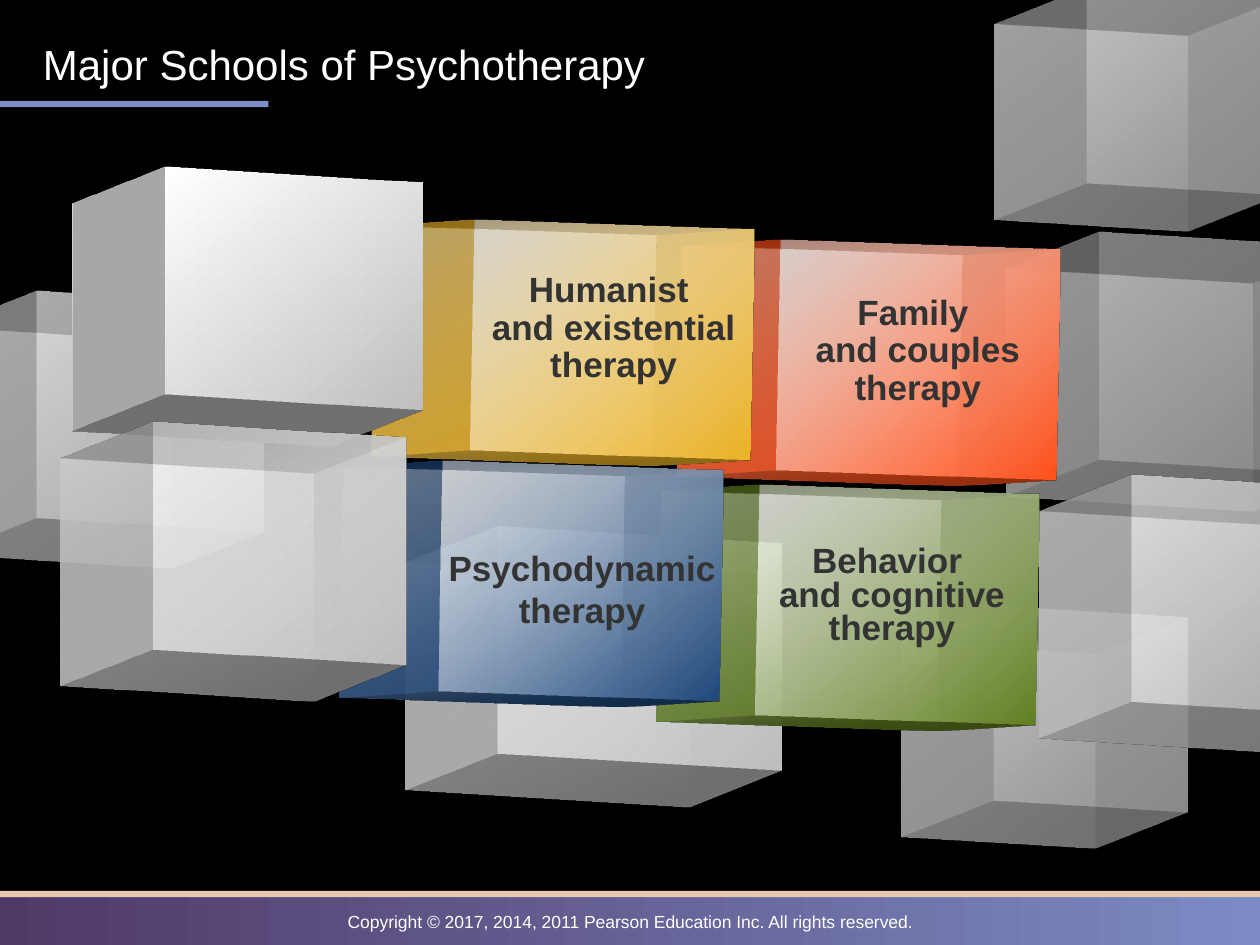
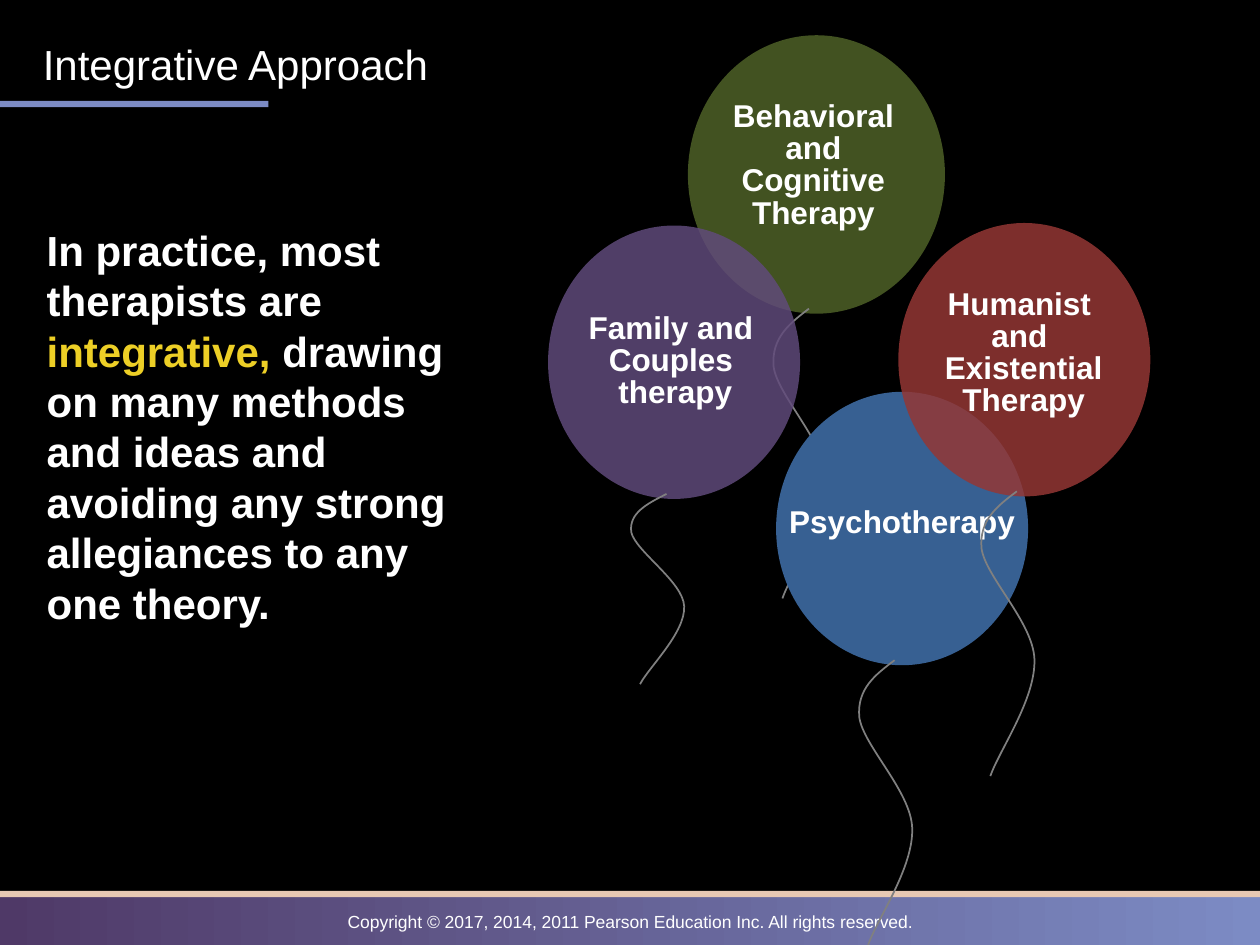
from lxml import etree
from pptx import Presentation
from pptx.dml.color import RGBColor
from pptx.enum.shapes import MSO_SHAPE
from pptx.enum.text import MSO_ANCHOR, MSO_AUTO_SIZE, PP_ALIGN
from pptx.oxml.ns import qn
from pptx.util import Inches, Pt

RECT, OVAL = MSO_SHAPE.RECTANGLE, MSO_SHAPE.OVAL
LEFT, CENTER = PP_ALIGN.LEFT, PP_ALIGN.CENTER
TOP, MIDDLE = MSO_ANCHOR.TOP, MSO_ANCHOR.MIDDLE
NO_FIT = MSO_AUTO_SIZE.NONE
COLS, ROWS = 10, 7.5
FONT = "Arial"
COLORS = {
    "black": "000000", "white": "FFFFFF", "ink": "333333", "accent": "EDCF26",
    "plum": "4F3967", "periwinkle": "7C8BC4", "sand": "E7C8B3",
    "silver": "BFBFBF", "string": "808080",
    "amber": "EDB426", "orange": "FF511B", "green": "618021", "blue": "1F497D",
    "olive": "4F6228", "azure": "376092", "violet": "604A7B", "brick": "953735",
}
GRAY_VIEW = {"lat": 351, "lon": 338.5, "tilt": 0}
COLOR_VIEW = {"lat": 358, "lon": 337, "tilt": 1.1}
CUBE_DEPTH = Inches(2)
STRING = [(0, 0), (-0.15, 0.05), (-0.3, 0.1), (-0.28, 0.2), (-0.25, 0.3),
          (0.13, 0.46), (0.14, 0.59), (0.15, 0.73), (-0.14, 0.91), (-0.21, 1)]


def rgb(name):
    return RGBColor.from_string(COLORS[name])


def add(parent, tag, **attributes):
    child = etree.SubElement(parent, qn(tag))
    for key, value in attributes.items():
        child.set(key, str(value))
    return child


def write(tf, text, size=18, color="white", bold=False, align=LEFT,
          spacing=1.0, anchor=TOP, accent=None):
    tf.word_wrap = True
    tf.auto_size = NO_FIT
    tf.vertical_anchor = anchor
    for i, line in enumerate(text.split("\n")):
        p = tf.paragraphs[0] if i == 0 else tf.add_paragraph()
        p.alignment = align
        p.line_spacing = spacing
        p.space_before = Pt(0)
        for j, part in enumerate(line.split("\v")):
            if j:
                p.add_line_break()
            pieces = part.partition(accent) if accent else (part,)
            for piece in filter(None, pieces):
                r = p.add_run()
                r.text = piece
                r.font.name = FONT
                r.font.size = Pt(size)
                r.font.bold = bold
                r.font.color.rgb = rgb("accent" if piece == accent else color)


class Deck:
    def __init__(self):
        self.prs = Presentation()
        self.prs.slide_width, self.prs.slide_height = Inches(COLS), Inches(ROWS)

    def grid(self, col, row):
        return (round(col * self.prs.slide_width / COLS),
                round(row * self.prs.slide_height / ROWS))

    def place(self, sp, col, row, width, height):
        sp.left, sp.top = self.grid(col, row)
        sp.width, sp.height = self.grid(width, height)

    def slide(self, title, layout):
        self.s = self.prs.slides.add_slide(self.prs.slide_layouts[layout])
        fill = self.s.background.fill
        fill.solid()
        fill.fore_color.rgb = rgb("black")
        self.shape(RECT, (0, 7.08, 10, 0.42), ["plum", "periwinkle"], angle=0)
        self.shape(RECT, (0, 7.07, 10, 0.05), ["sand"])
        self.label("Copyright © 2017, 2014, 2011 Pearson Education Inc. "
                   "All rights reserved.", (0, 7.18, 10, 0.27), size=10)
        self.shape(RECT, (0, 0.8, 2.13, 0.05), ["periwinkle"])
        self.place(self.s.shapes.title, 0.24, 0.21, 8.5, 0.59)
        write(self.s.shapes.title.text_frame, title, size=24, anchor=MIDDLE)

    def shape(self, kind, box, colors, alphas=(100, 100), angle=129):
        sp = self.s.shapes.add_shape(kind, *self.grid(*box[:2]), *self.grid(*box[2:]))
        sp.shadow.inherit = False
        sp.line.fill.background()
        if len(colors) == 1:
            sp.fill.solid()
            sp.fill.fore_color.rgb = rgb(colors[0])
        else:
            sp.fill.gradient()
            sp.fill.gradient_angle = angle
            for stop, color in zip(sp.fill.gradient_stops, colors):
                stop.color.rgb = rgb(color)
        for color, alpha in zip(sp.element.spPr.iter(qn("a:srgbClr")), alphas):
            if alpha < 100:
                add(color, "a:alpha", val=alpha * 1000)
        return sp

    def label(self, text, box, **style):
        sp = self.s.shapes.add_textbox(*self.grid(*box[:2]), *self.grid(*box[2:]))
        tf = sp.text_frame
        tf.margin_left = tf.margin_right = 0
        write(tf, text, align=CENTER, **style)

    def body(self, text, box, **style):
        sp = self.s.placeholders[1]
        self.place(sp, *box)
        write(sp.text_frame, text, **style)
        for p in sp.text_frame.paragraphs:
            props = p._p.get_or_add_pPr()
            props.set("marL", "0")
            props.set("indent", "0")
            add(props, "a:buNone")

    def cube(self, box, color, view, alphas):
        sp = self.shape(RECT, box, [color, "white"], alphas)
        sp.rotation = view["tilt"]
        scene = add(sp.element.spPr, "a:scene3d")
        camera = add(scene, "a:camera", prst="orthographicFront")
        add(camera, "a:rot", lat=round(view["lat"] * 60000),
            lon=round(view["lon"] * 60000), rev=0)
        add(scene, "a:lightRig", rig="legacyFlat3", dir="t")
        solid = add(sp.element.spPr, "a:sp3d", extrusionH=CUBE_DEPTH,
                    prstMaterial="legacyMatte")
        add(add(solid, "a:extrusionClr"), "a:srgbClr", val=COLORS[color])

    def string(self, col, row, length):
        start, *rest = [self.grid(col + dx, row + dy * length) for dx, dy in STRING]
        builder = self.s.shapes.build_freeform(*start)
        builder.add_line_segments(rest, close=False)
        sp = builder.convert_to_shape()
        lines = list(sp.element.spPr.iter(qn("a:lnTo")))
        for i in range(0, len(lines), 3):
            curve = etree.Element(qn("a:cubicBezTo"))
            lines[i].addprevious(curve)
            for line in lines[i:i + 3]:
                curve.append(line[0])
                line.getparent().remove(line)
        sp.shadow.inherit = False
        sp.fill.background()
        sp.line.color.rgb = rgb("string")
        sp.line.width = Pt(1)

    def balloon(self, box, color, alpha, text, text_box, string_length):
        self.shape(OVAL, box, [color], [alpha])
        self.label(text, text_box, size=18, bold=True, spacing=0.85)
        col, row, width, height = box
        self.string(col + width / 2 - 0.06, row + height - 0.04, string_length)


def schools(deck):
    deck.slide("Major Schools of Psychotherapy", 5)
    background_cubes = [
        ((8.57, -0.06, 1.65, 1.57), (53, 53)),
        ((0.22, 2.35, 1.94, 1.83), (63, 63)),
        ((8.65, 1.89, 2.1, 1.83), (47, 47)),
        ((3.87, 4.23, 2.42, 1.83), (100, 58)),
        ((7.83, 4.84, 1.65, 1.57), (53, 53)),
        ((8.91, 3.81, 1.99, 1.83), (66, 66)),
    ]
    for box, alphas in background_cubes:
        deck.cube(box, "silver", GRAY_VIEW, alphas)
    therapies = [
        ((6.08, 1.94), "orange", "Family \vand couples therapy", (6.2, 2.29, 2.17, 1.02), 0.9),
        ((3.65, 1.78), "amber", "Humanist \vand existential therapy", (3.67, 2.11, 2.4, 1.02), 0.9),
        ((5.91, 3.88), "green", "Behavior \vand cognitive therapy", (6.03, 4.29, 2.1, 0.92), 0.8),
        ((3.4, 3.69), "blue", "Psychodynamic therapy", (3.41, 4.29, 2.42, 0.77), 1.0),
    ]
    for corner, color, text, text_box, spacing in therapies:
        deck.cube((*corner, 2.42, 1.83), color, COLOR_VIEW, (100, 58))
        deck.label(text, text_box, size=20, bold=True, color="ink", spacing=spacing)
    deck.cube((1.23, 1.37, 2.2, 1.83), "silver", GRAY_VIEW, (100, 100))
    deck.cube((1.14, 3.4, 2.16, 1.83), "silver", GRAY_VIEW, (100, 58))


def integrative(deck):
    deck.slide("Integrative Approach", 1)
    deck.body("In practice, most therapists are integrative, drawing on many methods "
              "and ideas and avoiding any strong allegiances to any one theory.",
              (0.27, 1.73, 3.62, 3.32), size=24, bold=True, accent="integrative,")
    balloons = [
        ((5.46, 0.28, 2.04, 2.21), "olive", 84, "Behavioral and Cognitive\vTherapy",
         (5.68, 0.76, 1.55, 1.14), 2.3),
        ((6.16, 3.11, 2, 2.17), "azure", 100, "Psychotherapy",
         (6.14, 3.98, 2.04, 0.37), 2.26),
        ((4.35, 1.79, 2, 2.17), "violet", 84, "Family and \nCouples \ntherapy",
         (4.56, 2.44, 1.6, 0.88), 1.51),
        ((7.13, 1.77, 2, 2.17), "brick", 84, "Humanist \vand \nExistential\vTherapy",
         (7.39, 2.25, 1.47, 1.14), 2.26),
    ]
    for balloon in balloons:
        deck.balloon(*balloon)


def main():
    deck = Deck()
    schools(deck)
    integrative(deck)
    deck.prs.save("out.pptx")


if __name__ == "__main__":
    main()
